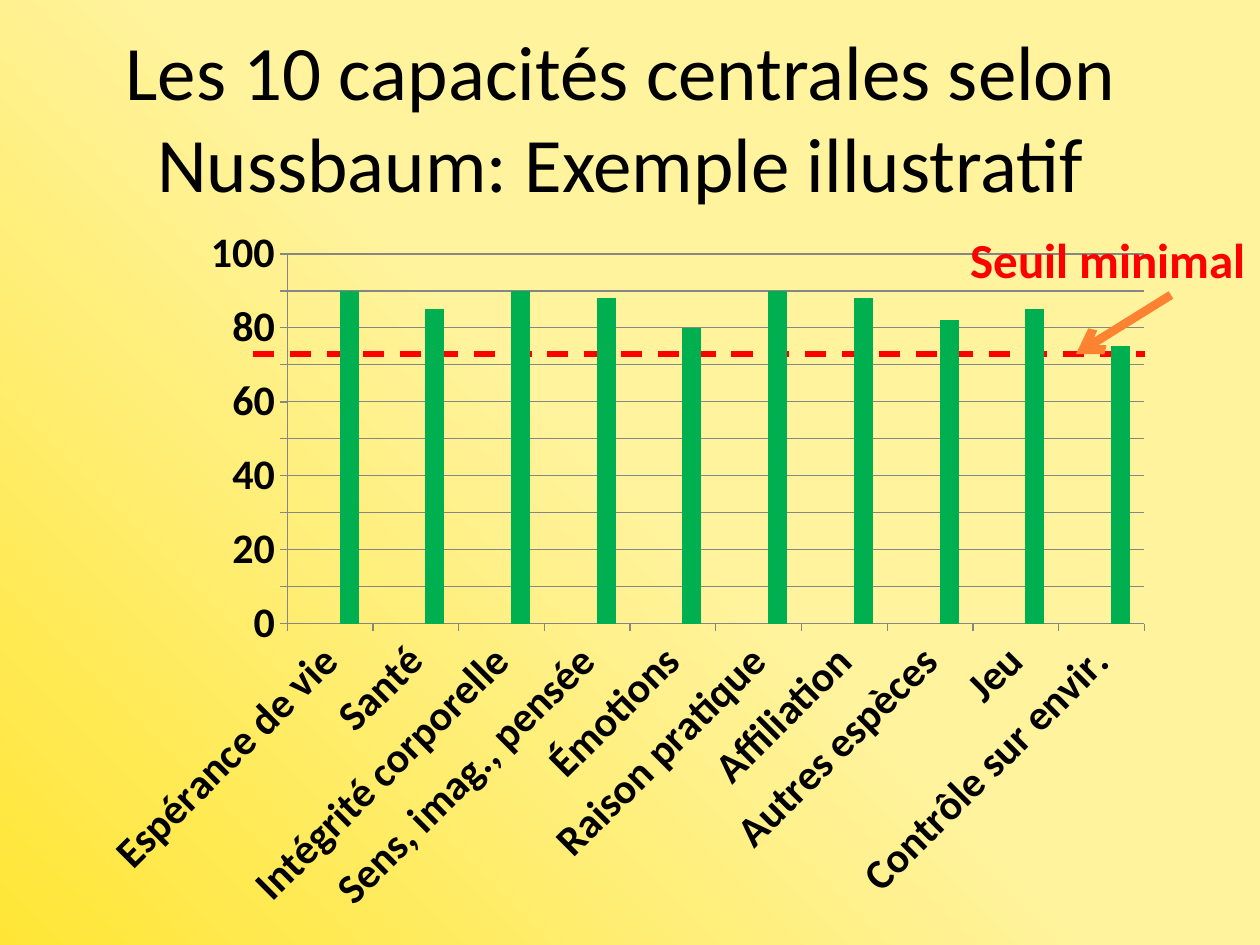
from dataclasses import dataclass

from lxml.etree import SubElement
from pptx import Presentation
from pptx.chart.data import CategoryChartData
from pptx.dml.color import RGBColor as RGB
from pptx.enum.chart import XL_CHART_TYPE as CT, XL_TICK_MARK as TICK
from pptx.enum.dml import MSO_LINE_DASH_STYLE as DASH
from pptx.enum.shapes import MSO_CONNECTOR as CONN
from pptx.enum.text import MSO_ANCHOR as ANCHOR, PP_ALIGN as ALIGN
from pptx.oxml import parse_xml
from pptx.oxml.ns import nsdecls, qn
from pptx.util import Pt

PX = 914400 // 126


@dataclass(frozen=True)
class Theme:
    font: str = "Calibri"
    text: str = "000000"
    threshold: str = "FF0000"
    arrow: str = "FD8231"
    grid: str = "868686"
    bg: tuple = (("FFE636", 0), ("FFF39D", 0.5))
    series: tuple = ("FE8637", "7598D9", "00B050")
    title_size: int = 44
    label_size: int = 28
    axis_size: int = 24


THEME = Theme()
CAPACITIES = {
    "Espérance de vie": 90,
    "Santé": 85,
    "Intégrité corporelle": 90,
    "Sens, imag., pensée": 88,
    "Émotions": 80,
    "Raison pratique": 90,
    "Affiliation": 88,
    "Autres espèces": 82,
    "Jeu": 85,
    "Contrôle sur envir.": 75,
}


def px(*lengths):
    return [n * PX for n in lengths]


def set_attrs(obj, values):
    for name, value in values.items():
        setattr(obj, name, value)


def set_font(font, size, color, bold=False):
    set_attrs(font, {"name": THEME.font, "size": Pt(size), "bold": bold})
    font.color.rgb = RGB.from_string(color)


def set_line(line, color, width):
    line.color.rgb = RGB.from_string(color)
    line.width = Pt(width)


def set_background(s):
    fill = s.background.fill
    fill.gradient()
    fill.gradient_angle = 45
    for stop, (color, position) in zip(fill.gradient_stops, THEME.bg):
        stop.color.rgb = RGB.from_string(color)
        stop.position = position


def set_title(s, text, box):
    sp = s.shapes.title
    set_attrs(sp, dict(zip(("left", "top", "width", "height"), px(*box))))
    tf = sp.text_frame
    set_attrs(tf, {"text": text, "word_wrap": True, "vertical_anchor": ANCHOR.MIDDLE})
    p = tf.paragraphs[0]
    p.alignment = ALIGN.CENTER
    set_font(p.runs[0].font, THEME.title_size, THEME.text)


def add_label(s, text, box):
    tf = s.shapes.add_textbox(*px(*box)).text_frame
    set_attrs(tf, {"text": text, "word_wrap": True})
    set_font(tf.paragraphs[0].runs[0].font, THEME.label_size, THEME.threshold, True)


def add_line(s, ends, color, width, dash=None, arrow=False):
    cxn = s.shapes.add_connector(CONN.STRAIGHT, *px(*ends))
    set_line(cxn.line, color, width)
    if dash:
        cxn.line.dash_style = dash
    if arrow:
        SubElement(cxn.line._get_or_add_ln(), qn("a:tailEnd"), type="arrow")
    SubElement(cxn._element.spPr, qn("a:effectLst"))


def set_plot_area(chart, box, plot):
    """Pin the inner plot area to the px rectangle plot of the chart box."""
    left, top, width, height = box
    x, y, w, h = plot
    parts = {"x": (x - left) / width, "y": (y - top) / height,
             "w": w / width, "h": h / height}
    modes = "".join(f'<c:{k}Mode val="edge"/>' for k in "xy")
    sizes = "".join(f'<c:{k} val="{v:.3f}"/>' for k, v in parts.items())
    layout = parse_xml(
        f'<c:layout {nsdecls("c")}><c:manualLayout><c:layoutTarget val="inner"/>'
        f"{modes}{sizes}</c:manualLayout></c:layout>")
    area = chart._chartSpace.chart.plotArea
    for old in area.findall(qn("c:layout")):
        area.remove(old)
    area.insert(0, layout)


def add_capacity_chart(s, box, plot):
    data = CategoryChartData()
    data.categories = list(CAPACITIES)
    blank = [None] * len(CAPACITIES)
    for i, values in enumerate((blank, blank, CAPACITIES.values()), 1):
        data.add_series(f"Series {i}", values)
    chart = s.shapes.add_chart(CT.COLUMN_CLUSTERED, *px(*box), data).chart
    set_attrs(chart, {"has_legend": False, "has_title": False})
    set_font(chart.font, 10, THEME.text)
    set_attrs(chart.plots[0], {"gap_width": 150, "overlap": 0, "vary_by_categories": False})
    for series, color in zip(chart.plots[0].series, THEME.series):
        series.format.fill.solid()
        series.format.fill.fore_color.rgb = RGB.from_string(color)

    cat, val = chart.category_axis, chart.value_axis
    for axis in (cat, val):
        set_attrs(axis, {"major_tick_mark": TICK.OUTSIDE, "minor_tick_mark": TICK.NONE})
        set_font(axis.tick_labels.font, THEME.axis_size, THEME.text, True)
        set_line(axis.format.line, THEME.grid, 0.75)
    cat._element.txPr.bodyPr.set("rot", str(-45 * 60000))
    set_attrs(val, {"minimum_scale": 0, "maximum_scale": 100, "major_unit": 10,
                    "has_major_gridlines": True})
    set_line(val.major_gridlines.format.line, THEME.grid, 0.75)
    set_plot_area(chart, box, plot)


def main():
    prs = Presentation()
    prs.slide_width, prs.slide_height = px(1260, 945)
    s = prs.slides.add_slide(prs.slide_layouts[5])
    set_background(s)
    set_title(s, "Les 10 capacités centrales selon Nussbaum: Exemple illustratif",
              (54, 37, 1134, 158))
    add_line(s, (253, 354, 1145, 354), THEME.threshold, 3, dash=DASH.DASH)
    add_capacity_chart(s, box=(84, 214, 1081, 714), plot=(287, 254, 857, 370))
    add_label(s, "Seuil minimal", (958, 223, 427, 72))
    add_line(s, (1171, 295, 1076, 354), THEME.arrow, 5, arrow=True)
    prs.save("out.pptx")


if __name__ == "__main__":
    main()
